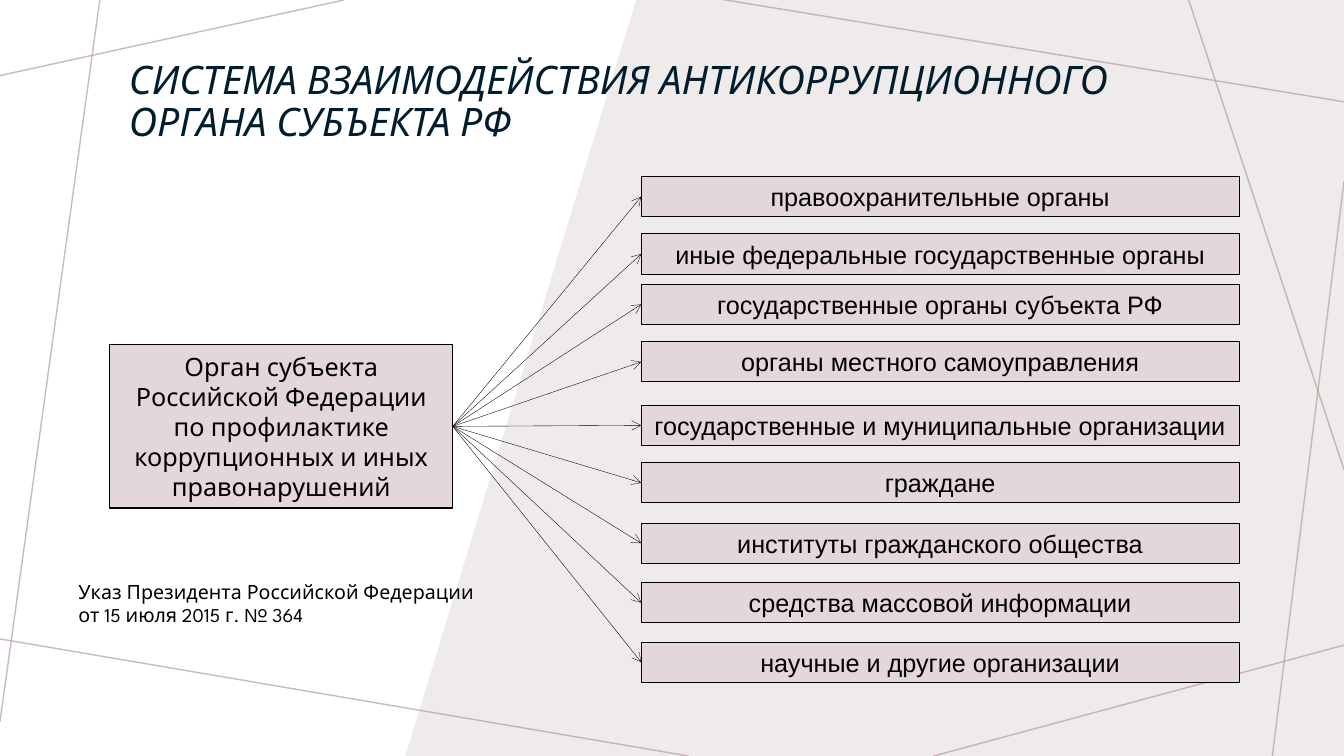
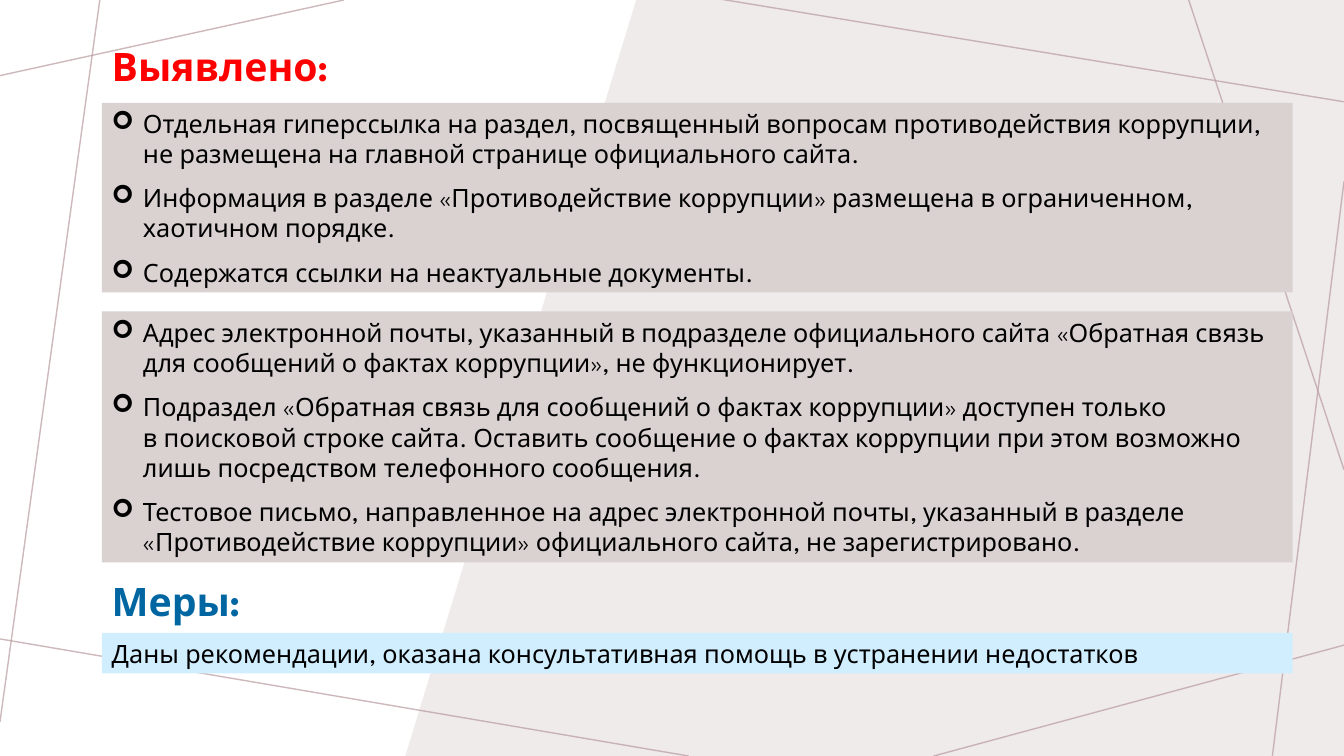
from lxml.etree import SubElement
from pptx import Presentation
from pptx.dml.color import RGBColor
from pptx.enum.shapes import MSO_CONNECTOR, MSO_SHAPE
from pptx.enum.text import MSO_ANCHOR as ANCHOR, MSO_AUTO_SIZE as AUTO, PP_ALIGN as ALIGN
from pptx.oxml.ns import qn
from pptx.util import Inches, Pt

COLORS = {
    "wedge": "EFEBEB", "web": "B99B9F", "title": "001D2E", "text": "000000",
    "node": "E3D7D9", "finding": "DAD1D1", "measure": "D1EEFF",
    "alert": "FF0000", "action": "0066A2",
}
MAIN_FONT = "League Spartan"
BODY = {"name": MAIN_FONT, "size": Pt(18)}
PARTNER = {"name": "Arial", "size": Pt(18)}
NOTE = {"name": MAIN_FONT, "size": Pt(14)}
TITLE = {"name": MAIN_FONT, "size": Pt(28), "italic": True}
HEADING = {"name": MAIN_FONT, "size": Pt(28), "bold": True}

# Shared background: a slanted wedge and thin crossing lines
WEDGE = [(13.33, 7.5), (4.02, 7.5), (6.31, 0), (13.33, 0)]
WEB = [
    (3.41, 0, 0, 0.75), (0.99, 0, 0, 7.16), (6.83, 7.5, -0.05, 6.33),
    (13.33, 6.4, 9.26, 7.5), (13.33, 1.8, 12.62, 7.5),
    (13.33, 4.66, 11.79, 0), (13.33, 1.01, 7.14, -0.01),
]

# Slide 1: partner bodies and the top of each box
PARTNERS = [
    (1.75, "правоохранительные органы"),
    (2.32, "иные федеральные государственные органы"),
    (2.82, "государственные органы субъекта РФ"),
    (3.39, "органы местного самоуправления"),
    (4.02, "государственные и муниципальные организации"),
    (4.59, "граждане"),
    (5.19, "институты гражданского общества"),
    (5.78, "средства массовой информации"),
    (6.37, "научные и другие организации"),
]

# Slide 2: findings on the site and on feedback
SITE_FINDINGS = [
    "Отдельная гиперссылка на раздел, посвященный вопросам противодействия "
    "коррупции, не размещена на главной странице официального сайта.",
    "Информация в разделе «Противодействие коррупции» размещена в ограниченном, "
    "хаотичном порядке.",
    "Содержатся ссылки на неактуальные документы.",
]
FEEDBACK_FINDINGS = [
    "Адрес электронной почты, указанный в подразделе официального сайта «Обратная "
    "связь для сообщений о фактах коррупции», не функционирует.",
    "Подраздел «Обратная связь для сообщений о фактах коррупции» доступен только\n"
    "в поисковой строке сайта. Оставить сообщение о фактах коррупции при этом "
    "возможно лишь посредством телефонного сообщения.",
    "Тестовое письмо, направленное на адрес электронной почты, указанный в разделе "
    "«Противодействие коррупции» официального сайта, не зарегистрировано.",
]


def rgb(key):
    return RGBColor.from_string(COLORS[key])


def add_bullet(paragraph):
    props = paragraph._p.get_or_add_pPr()
    props.set("marL", str(Inches(0.31)))
    props.set("indent", str(Inches(-0.31)))
    SubElement(props, qn("a:buFont"), typeface="Wingdings")
    SubElement(props, qn("a:buChar"), char="➢")


def write(shape, lines, style, color="text", align=ALIGN.LEFT, bullets=False,
          anchor=ANCHOR.TOP, autosize=AUTO.SHAPE_TO_FIT_TEXT, spacing=None):
    frame = shape.text_frame
    settings = {"word_wrap": True, "auto_size": autosize, "vertical_anchor": anchor}
    for attribute, value in settings.items():
        setattr(frame, attribute, value)
    for index, line in enumerate(lines):
        paragraph = frame.add_paragraph() if index else frame.paragraphs[0]
        paragraph.text = line
        paragraph.alignment = align
        paragraph.line_spacing = spacing
        if bullets:
            add_bullet(paragraph)
            if index:
                paragraph.space_before = Pt(10)
        for run in paragraph.runs:
            for attribute, value in style.items():
                setattr(run.font, attribute, value)
            run.font.color.rgb = rgb(color)


def add_label(slide, box, lines, style, **options):
    label = slide.shapes.add_textbox(*map(Inches, box))
    write(label, lines, style, **options)


def add_panel(slide, box, fill, lines, style=BODY, outlined=False, **options):
    panel = slide.shapes.add_shape(MSO_SHAPE.RECTANGLE, *map(Inches, box))
    panel.shadow.inherit = False
    panel.fill.solid()
    panel.fill.fore_color.rgb = rgb(fill)
    if outlined:
        panel.line.color.rgb = rgb("text")
        panel.line.width = Pt(0.75)
    else:
        panel.line.fill.background()
    write(panel, lines, style, anchor=ANCHOR.MIDDLE, **options)
    return panel


def add_line(slide, ends, color, width):
    line = slide.shapes.add_connector(MSO_CONNECTOR.STRAIGHT, *map(Inches, ends))
    line.line.color.rgb = rgb(color)
    line.line.width = Pt(width)
    SubElement(line._element.spPr, qn("a:effectLst"))
    return line


def add_arrow(slide, source, target):
    arrow = add_line(slide, (0, 0, 1, 1), "text", 0.25)
    arrow.begin_connect(source, 3)  # right side
    arrow.end_connect(target, 1)    # left side
    SubElement(arrow.line._get_or_add_ln(), qn("a:tailEnd"), type="arrow")


def build_background(slide):
    """Draw the decoration and hand it to the layout, so all slides share it."""
    layout = slide.slide_layout
    for placeholder in list(layout.placeholders):
        layout.shapes.element.remove(placeholder._element)

    corners = [(Inches(x), Inches(y)) for x, y in WEDGE]
    builder = slide.shapes.build_freeform(*corners[0])
    builder.add_line_segments(corners[1:], close=True)
    wedge = builder.convert_to_shape()
    wedge.shadow.inherit = False
    wedge.fill.solid()
    wedge.fill.fore_color.rgb = rgb("wedge")
    wedge.line.fill.background()

    for ends in WEB:
        strand = add_line(slide, ends, "web", 1)
        tint = strand._element.spPr.find(".//" + qn("a:srgbClr"))
        SubElement(tint, qn("a:alpha"), val="70000")

    for part in list(slide.shapes):
        layout.shapes.element.append(part._element)


def build_interaction(slide):
    add_label(slide, (1.18, 0.53, 10.94, 0.98),
              ["СИСТЕМА ВЗАИМОДЕЙСТВИЯ АНТИКОРРУПЦИОННОГО ОРГАНА СУБЪЕКТА РФ"],
              TITLE, color="title", anchor=ANCHOR.MIDDLE, autosize=AUTO.NONE, spacing=0.9)
    node = {"fill": "node", "outlined": True, "align": ALIGN.CENTER}
    authority = add_panel(
        slide, (1.09, 3.42, 3.4, 1.62), **node,
        lines=["Орган субъекта Российской Федерации по профилактике "
               "коррупционных и иных правонарушений"])
    for top, name in PARTNERS:
        partner = add_panel(slide, (6.36, top, 5.93, 0.4), lines=[name],
                            style=PARTNER, **node)
        add_arrow(slide, authority, partner)
    add_label(slide, (0.68, 5.7, 4.59, 0.57),
              ["Указ Президента Российской Федерации", "от 15 июля 2015 г. № 364"], NOTE)


def build_findings(slide):
    left, width = 1.01, 11.81
    add_label(slide, (left, 0.37, 2.6, 0.57), ["Выявлено:"], HEADING, color="alert")
    add_panel(slide, (left, 1.02, width, 1.88), "finding", SITE_FINDINGS, bullets=True)
    add_panel(slide, (left, 3.09, width, 2.49), "finding", FEEDBACK_FINDINGS, bullets=True)
    add_label(slide, (left, 5.68, 2.18, 0.57), ["Меры:"], HEADING, color="action")
    add_panel(slide, (left, 6.28, width, 0.4), "measure",
              ["Даны рекомендации, оказана консультативная помощь в устранении недостатков"])


def main():
    deck = Presentation()
    deck.slide_width, deck.slide_height = Inches(13.33), Inches(7.5)
    blank = deck.slide_layouts[6]
    interaction = deck.slides.add_slide(blank)
    build_background(interaction)
    build_interaction(interaction)
    build_findings(deck.slides.add_slide(blank))
    deck.save("out.pptx")


if __name__ == "__main__":
    main()
